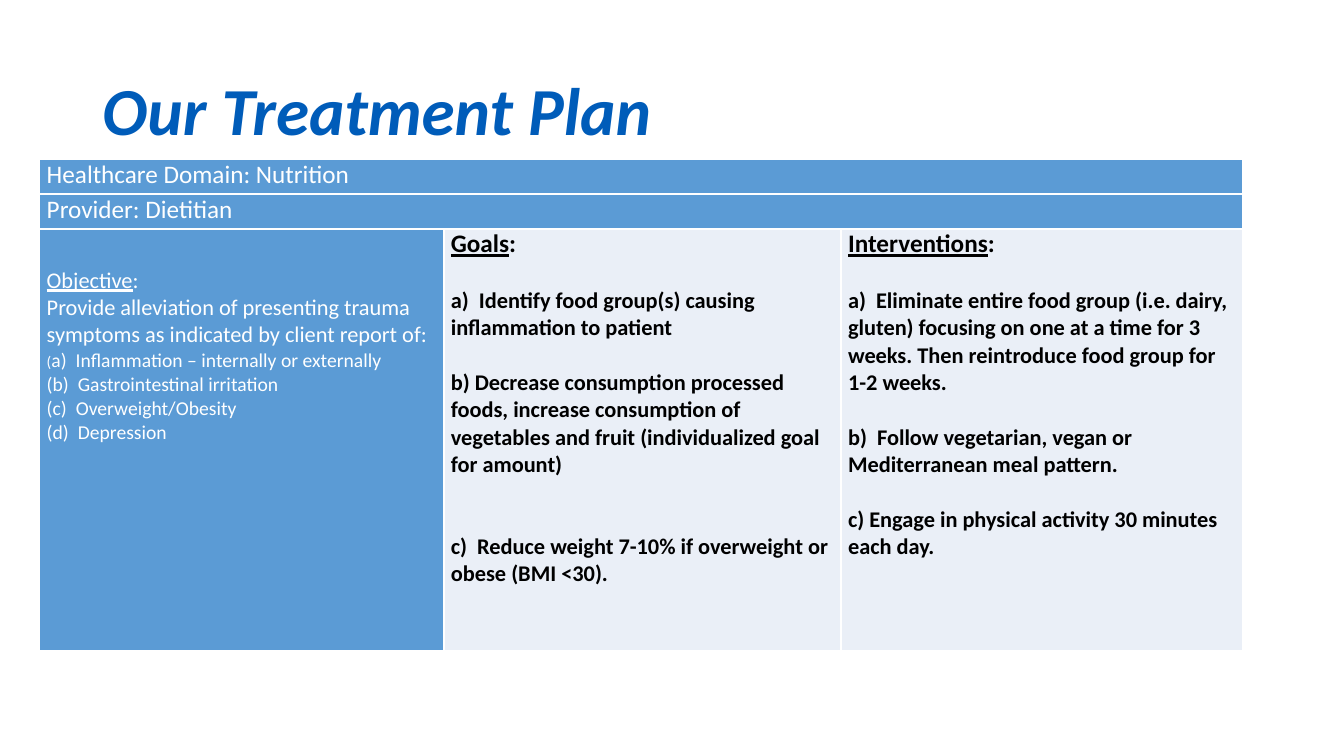
"""Build the treatment plan slide: a title above a merged-header table."""
from lxml import etree
from pptx import Presentation
from pptx.dml.color import RGBColor
from pptx.enum.text import MSO_ANCHOR, MSO_AUTO_SIZE, PP_ALIGN
from pptx.oxml.ns import qn
from pptx.util import Pt

LEFT, MIDDLE, NO_FIT = PP_ALIGN.LEFT, MSO_ANCHOR.MIDDLE, MSO_AUTO_SIZE.NONE
FONT = "Calibri"
BLUE, PALE, WHITE, BLACK, TITLE_BLUE = "5B9BD5", "EAEFF7", "FFFFFF", "000000", "005CB9"
GAP = 19.5

TITLE = "Our Treatment Plan"
HEADERS = ["Healthcare Domain: Nutrition", "Provider: Dietitian"]
# Each paragraph is (space before, [(text, size, underlined), ...]).
OBJECTIVE = [
    (0, [("Objective", 16, True), (":", 16, False)]),
    (0, [("Provide alleviation of presenting trauma symptoms as indicated "
          "by client report of:", 16, False)]),
    (0, [("(", 11, False), ("a)  Inflammation – internally or externally", 14, False)]),
    (0, [("(b)  Gastrointestinal irritation", 14, False)]),
    (0, [("(c)  Overweight/Obesity", 14, False)]),
    (0, [("(d)  Depression", 14, False)]),
]
GOALS = [
    (0, [("Goals", 18, True), (":", 18, False)]),
    (GAP, [("a)  Identify food group(s) causing inflammation to patient", 16, False)]),
    (GAP, [("b) Decrease consumption processed foods, increase consumption of "
            "vegetables and fruit (individualized goal for amount)", 16, False)]),
    (2 * GAP, [("c)  Reduce weight 7-10% if overweight or obese (BMI <30).", 16, False)]),
]
INTERVENTIONS = [
    (0, [("Interventions", 18, True), (":", 18, False)]),
    (GAP, [("a)  Eliminate entire food group (i.e. dairy, gluten) focusing on one at a "
            "time for 3 weeks. Then reintroduce food group for 1-2 weeks.", 16, False)]),
    (GAP, [("b)  Follow vegetarian, vegan or Mediterranean meal pattern.", 16, False)]),
    (GAP, [("c) Engage in physical activity 30 minutes each day.", 16, False)]),
]
# Each body cell is (paragraphs, top margin, fill, text colour, bold).
BODY = [
    (OBJECTIVE, 27, BLUE, WHITE, False),
    (GOALS, 0, PALE, BLACK, True),
    (INTERVENTIONS, 0, PALE, BLACK, True),
]
COL_WIDTHS = [288.7, 283.7, 286.6]
ROW_HEIGHTS = [25, 25, 301]


def rgb(value):
    return RGBColor.from_string(value)


def add_run(p, text, size, color, bold=False, italic=False, underline=False):
    r = p.add_run()
    r.text = text
    f = r.font
    f.name, f.size, f.bold, f.italic, f.underline = FONT, Pt(size), bold, italic, underline
    f.color.rgb = rgb(color)


def style_cell(cell, fill, top=0):
    cell.margin_left = cell.margin_right = Pt(5)
    cell.margin_top, cell.margin_bottom = Pt(top), Pt(0)
    tc_pr = cell._tc.get_or_add_tcPr()
    for side in ("a:lnL", "a:lnR", "a:lnT", "a:lnB"):
        ln = etree.SubElement(tc_pr, qn(side), w=str(Pt(1)))
        solid = etree.SubElement(ln, qn("a:solidFill"))
        etree.SubElement(solid, qn("a:srgbClr"), val=WHITE)
    cell.fill.solid()
    cell.fill.fore_color.rgb = rgb(fill)


def fill_text(cell, paragraphs, color, bold=False):
    tf = cell.text_frame
    for i, (before, runs) in enumerate(paragraphs):
        p = tf.add_paragraph() if i else tf.paragraphs[0]
        if before:
            p.space_before = Pt(before)
        for text, size, underline in runs:
            add_run(p, text, size, color, bold, underline=underline)


def add_title(slide):
    sp = slide.shapes.title
    sp.left, sp.top, sp.width, sp.height = Pt(66), Pt(28.8), Pt(828), Pt(104.4)
    tf = sp.text_frame
    tf.auto_size, tf.vertical_anchor, tf.word_wrap = NO_FIT, MIDDLE, True
    p = tf.paragraphs[0]
    p.alignment, p.line_spacing = LEFT, 0.9
    add_run(p, TITLE, 48, TITLE_BLUE, bold=True, italic=True)


def add_plan(slide):
    table = slide.shapes.add_table(len(ROW_HEIGHTS), len(COL_WIDTHS), Pt(28.4), Pt(113.6),
                                   Pt(sum(COL_WIDTHS)), Pt(sum(ROW_HEIGHTS))).table
    table.first_row = table.horz_banding = False
    for col, width in zip(table.columns, COL_WIDTHS):
        col.width = Pt(width)
    for row, height in zip(table.rows, ROW_HEIGHTS):
        row.height = Pt(height)
    last = len(COL_WIDTHS) - 1
    for i, header in enumerate(HEADERS):
        for cell in table.rows[i].cells:
            style_cell(cell, BLUE)
        table.cell(i, 0).merge(table.cell(i, last))
        fill_text(table.cell(i, 0), [(0, [(header, 18, False)])], WHITE)
    for j, (paragraphs, top, fill, color, bold) in enumerate(BODY):
        cell = table.cell(len(HEADERS), j)
        style_cell(cell, fill, top)
        fill_text(cell, paragraphs, color, bold)


def main():
    prs = Presentation()
    prs.slide_width, prs.slide_height = Pt(960), Pt(540)
    slide = prs.slides.add_slide(prs.slide_layouts[5])
    add_title(slide)
    add_plan(slide)
    prs.save("out.pptx")


if __name__ == "__main__":
    main()
